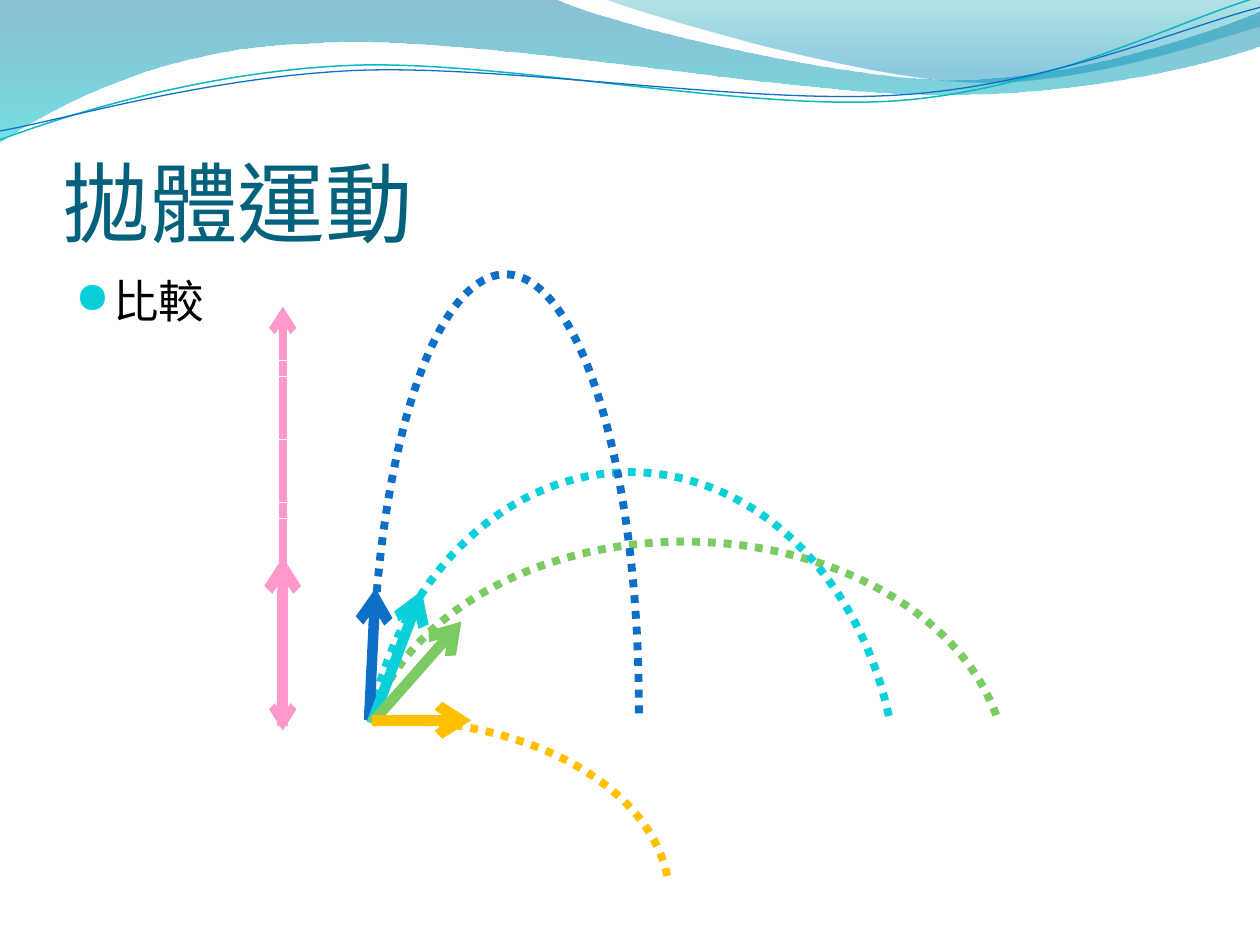
import pptx
import pptx.dml.color
import pptx.enum.dml
import pptx.enum.shapes
import pptx.enum.text
import pptx.oxml
import pptx.oxml.ns
import pptx.util
from pptx.util import Cm

THEME = {
    "title": "04617B", "body": "000000", "bullet": "0BD0D9",
    "blue": "0F6FC6", "cyan": "0BD0D9", "green": "7CCA62",
    "yellow": "FFC000", "pink": "FF99CC", "teal": "0AB8BF",
    "title_font": "Calibri", "body_font": "Noto Sans CJK SC",
    "bullet_font": "OpenSymbol",
    "title_pt": 50, "body_pt": 26, "dot_pt": 4.5, "arrow_pt": 6,
}

TITLE = "拋體運動"
BODY = "比較"

# Waves in cm: a start point, then (end,) for a line or (c1, c2, end) for a curve
BANDS = [  # start, segments, gradient stops (position, colour, opacity %)
    ((0, 0), [
        ((11.18, -0.03),),
        ((12.09, 0.43), (16.87, 1.6), (19.25, 1.6)),
        ((21.67, 1.6), (24.33, 0.66), (25.4, 0.23)),
        ((25.43, 0.91),),
        ((24.97, 1.12), (22.1, 1.93), (18.95, 1.91)),
        ((15.8, 1.91), (9.7, 0.71), (6.53, 0.86)),
        ((3.28, 0.91), (1.17, 2.11), (-0.03, 2.87)),
    ], [(0, "0074A1", 45), (1, "00C6CF", 55)]),
    ((12.17, -0.03), [
        ((12.93, 0.28), (17.32, 1.57), (19.53, 1.65)),
        ((21.74, 1.75), (24.41, 0.81), (25.4, 0.53)),
        ((25.4, 0),),
    ], [(0, "00A1A9", 30), (0.8, "008BBF", 45)]),
]
STRANDS = [  # start, segments, colour, width
    ((0, 2.82), [
        ((1.22, 2.36), (4.01, 1.45), (7.04, 1.32)),
        ((10.03, 1.19), (15.06, 2.26), (18.11, 2.03)),
        ((21.16, 1.8), (23.83, 0.38), (25.35, -0.05)),
    ], "teal", 0.85),
    ((0, 2.64), [
        ((1.19, 2.44), (4.17, 1.55), (7.19, 1.42)),
        ((10.24, 1.3), (15.16, 2.13), (18.21, 1.91)),
        ((21.23, 1.7), (23.9, 0.53), (25.4, 0.15)),
    ], "blue", 0.75),
]

# Motion, back to front: arcs are (box, adjustments), arrows are (from, to, dotted)
MOTION = [
    ("arc", "green", (7.3, 10.92, 13, 9.4), (115.28, 209.53)),
    ("arc", "cyan", (7.3, 9.52, 10.8, 13.23), (119.28, 206.1)),
    ("arc", "blue", (7.5, 5.53, 5.38, 17.45), (105.14, 3.27)),
    ("arrow", "blue", (7.44, 14.52), (7.57, 11.86), False),
    ("arrow", "cyan", (7.49, 14.58), (8.5, 11.91), False),
    ("arrow", "green", (7.49, 14.58), (9.3, 12.53), False),
    ("arc", "yellow", (2.3, 14.53, 11.2, 7.19), (162, 213.75)),
    ("arrow", "yellow", (7.49, 14.52), (9.5, 14.52), False),
    ("arrow", "pink", (5.7, 14.58), (5.7, 6.18), True),
    ("arrow", "pink", (5.7, 6.32), (5.7, 14.73), True),
    ("arrow", "pink", (5.7, 14.63), (5.7, 11.23), False),
]


def rgb(name):
    return pptx.dml.color.RGBColor.from_string(THEME.get(name, name))


def add_xml(parent, tag, **attrs):
    el = pptx.oxml.parse_xml(f"<a:{tag} {pptx.oxml.ns.nsdecls('a')}/>")
    for key, value in attrs.items():
        el.set(key, str(value))
    parent.append(el)
    return el


def style_line(sp, color, width, dotted=False):
    sp.line.color.rgb = rgb(color)
    sp.line.width = pptx.util.Pt(width)
    if dotted:
        sp.line.dash_style = pptx.enum.dml.MSO_LINE.ROUND_DOT


def add_wave(shapes, start, segments, close):
    fb = shapes.build_freeform(Cm(start[0]), Cm(start[1]))
    points = [(Cm(x), Cm(y)) for seg in segments for x, y in seg]
    fb.add_line_segments(points, close=close)
    sp = fb.convert_to_shape()
    sp.shadow.inherit = False
    # Merge each run of three line points into one cubic curve
    lines = iter(list(sp._element.iter(pptx.oxml.ns.qn("a:lnTo"))))
    for seg in segments:
        parts = [next(lines) for _ in seg]
        if len(seg) == 3:
            curve = add_xml(parts[0].getparent(), "cubicBezTo")
            parts[0].addprevious(curve)
            for part in parts:
                curve.append(part[0])
                part.getparent().remove(part)
    return sp


def add_band(shapes, start, segments, stops):
    sp = add_wave(shapes, start, segments, True)
    sp.line.fill.background()
    sp.fill.gradient()
    sp.fill.gradient_angle = 270
    for stop, (pos, color, _) in zip(sp.fill.gradient_stops, stops):
        stop.position = pos
        stop.color.rgb = rgb(color)
    clrs = list(sp._element.spPr.iter(pptx.oxml.ns.qn("a:srgbClr")))
    for clr, (_, _, opacity) in zip(clrs, stops):
        add_xml(clr, "alpha", val=opacity * 1000)


def add_strand(shapes, start, segments, color, width):
    sp = add_wave(shapes, start, segments, False)
    sp.fill.background()
    style_line(sp, color, width)


def add_arc(shapes, color, box, adjustments):
    sp = shapes.add_shape(pptx.enum.shapes.MSO_SHAPE.ARC, *map(Cm, box))
    sp.shadow.inherit = False
    sp.fill.background()
    for i, value in enumerate(adjustments):
        sp.adjustments[i] = value
    style_line(sp, color, THEME["dot_pt"], dotted=True)


def add_arrow(shapes, color, start, end, dotted):
    sp = shapes.add_connector(pptx.enum.shapes.MSO_CONNECTOR.STRAIGHT,
                              *map(Cm, start + end))
    style_line(sp, color, THEME["dot_pt" if dotted else "arrow_pt"], dotted)
    add_xml(sp.line._get_or_add_ln(), "tailEnd", type="arrow")
    add_xml(sp._element.spPr, "effectLst")


def add_text(shapes, box, text, role):
    tf = shapes.add_textbox(*map(Cm, box)).text_frame
    tf.word_wrap = True
    r = tf.paragraphs[0].add_run()
    r.text = text
    r.font.name = THEME[role + "_font"]
    r.font.size = pptx.util.Pt(THEME[role + "_pt"])
    r.font.color.rgb = rgb(role)
    rPr = r.font._element
    rPr.set("lang", "zh-TW")
    add_xml(rPr, "ea", typeface=THEME[role + "_font"])
    return tf


def main():
    prs = pptx.Presentation()
    prs.slide_width, prs.slide_height = Cm(25.4), Cm(19.05)
    shapes = prs.slides.add_slide(prs.slide_layouts[6]).shapes

    # Wave header
    for band in BANDS:
        add_band(shapes, *band)
    for strand in STRANDS:
        add_strand(shapes, *strand)

    # Title
    tf = add_text(shapes, (1.27, 1.95, 22.86, 3.18), TITLE, "title")
    tf.vertical_anchor = pptx.enum.text.MSO_ANCHOR.BOTTOM
    tf.margin_left = tf.margin_right = tf.margin_bottom = 0

    # Bulleted body
    tf = add_text(shapes, (1.27, 5.38, 22.86, 12.19), BODY, "body")
    pPr = tf.paragraphs[0]._p.get_or_add_pPr()
    pPr.set("marL", str(Cm(0.76)))
    pPr.set("indent", str(-Cm(0.76)))
    add_xml(add_xml(pPr, "spcBef"), "spcPct", val=20000)
    add_xml(add_xml(pPr, "buClr"), "srgbClr", val=THEME["bullet"])
    add_xml(pPr, "buSzPct", val=95000)
    add_xml(pPr, "buFont", typeface=THEME["bullet_font"])
    add_xml(pPr, "buChar", char="●")

    # Trajectories and velocity arrows
    draw = {"arc": add_arc, "arrow": add_arrow}
    for kind, *args in MOTION:
        draw[kind](shapes, *args)

    prs.save("out.pptx")


if __name__ == "__main__":
    main()
